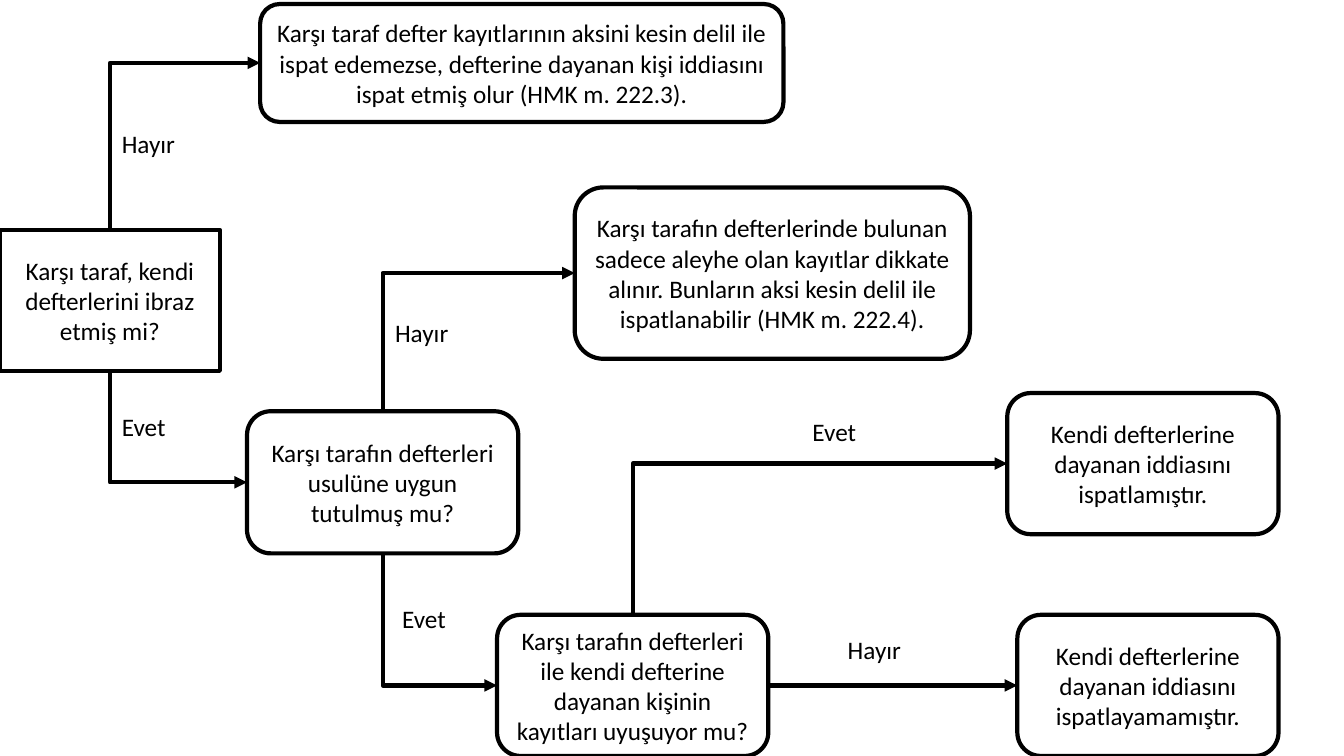
from lxml import etree
from pptx import Presentation
from pptx.dml.color import RGBColor
from pptx.enum.shapes import MSO_CONNECTOR, MSO_SHAPE
from pptx.enum.text import MSO_ANCHOR, PP_ALIGN
from pptx.oxml.ns import qn
from pptx.util import Inches, Pt

BLACK = RGBColor(0, 0, 0)
WHITE = RGBColor(255, 255, 255)
TOP, LEFT, BOTTOM, RIGHT = range(4)  # connection sites of a box

# name: (left, top, width, height, text)
BOXES = {
    "submitted": (0, 2.28, 2.18, 1.4, "Karşı taraf, kendi defterlerini ibraz etmiş mi?"),
    "proven": (2.58, 0.04, 5.19, 1.17,
               "Karşı taraf defter kayıtlarının aksini kesin delil ile ispat edemezse, "
               "defterine dayanan kişi iddiasını ispat etmiş olur (HMK m. 222.3)."),
    "proper": (2.45, 4.08, 2.69, 1.41,
               "Karşı tarafın defterleri usulüne uygun tutulmuş mu?"),
    "matching": (4.93, 6.1, 2.69, 1.4,
                 "Karşı tarafın defterleri ile kendi defterine dayanan kişinin "
                 "kayıtları uyuşuyor mu?"),
    "adverse": (5.7, 1.86, 3.92, 1.7,
                "Karşı tarafın defterlerinde bulunan sadece aleyhe olan kayıtlar dikkate "
                "alınır. Bunların aksi kesin delil ile ispatlanabilir (HMK m. 222.4)."),
    "success": (9.99, 3.9, 2.69, 1.4,
                "Kendi defterlerine dayanan iddiasını ispatlamıştır."),
    "failure": (10.09, 6.1, 2.59, 1.4,
                "Kendi defterlerine dayanan iddiasını ispatlayamamıştır."),
}

# (from, site, to, answer, label left, label top)
BRANCHES = [
    ("submitted", TOP, "proven", "Hayır", 1.11, 1.22),
    ("submitted", BOTTOM, "proper", "Evet", 1.11, 4.03),
    ("proper", TOP, "adverse", "Hayır", 3.82, 3.1),
    ("proper", BOTTOM, "matching", "Evet", 3.89, 5.94),
    ("matching", TOP, "success", "Evet", 7.96, 4.08),
    ("matching", RIGHT, "failure", "Hayır", 8.31, 6.24),
]


def write(frame, text, align):
    frame.word_wrap = True
    para = frame.paragraphs[0]
    para.alignment = align
    run = para.add_run()
    run.text = text
    run.font.name = "Calibri"
    run.font.size = Pt(18)
    run.font.color.rgb = BLACK


def add_box(slide, left, top, width, height, text, kind):
    box = slide.shapes.add_shape(
        kind, Inches(left), Inches(top), Inches(width), Inches(height))
    box.shadow.inherit = False
    box.fill.solid()
    box.fill.fore_color.rgb = WHITE
    box.line.color.rgb = BLACK
    box.line.width = Pt(3)
    box.text_frame.vertical_anchor = MSO_ANCHOR.MIDDLE
    write(box.text_frame, text, PP_ALIGN.CENTER)
    return box


def turn_corner(link, upward):
    """Give the link one corner: first up or down, then to the right."""
    wide, high = link.width, link.height
    mid_x, mid_y = link.left + wide // 2, link.top + high // 2
    link.left, link.top = mid_x - high // 2, mid_y - wide // 2
    link.width, link.height = high, wide
    props = link._element.spPr
    props.find(qn("a:prstGeom")).set("prst", "bentConnector2")
    frame = props.find(qn("a:xfrm"))
    frame.set("rot", str((90 if upward else 270) * 60000))
    frame.set("flipH", "1")
    frame.set("flipV", "1" if upward else "0")


def add_link(slide, start, site, end):
    straight = site == RIGHT
    kind = MSO_CONNECTOR.STRAIGHT if straight else MSO_CONNECTOR.ELBOW
    link = slide.shapes.add_connector(kind, 0, 0, 0, 0)
    link.begin_connect(start, site)
    link.end_connect(end, LEFT)
    if not straight:
        turn_corner(link, site == TOP)
    link.line.color.rgb = BLACK
    link.line.width = Pt(3)
    etree.SubElement(link.line._get_or_add_ln(), qn("a:tailEnd"), type="triangle")
    etree.SubElement(link._element.spPr, qn("a:effectLst"))


def add_label(slide, left, top, text):
    label = slide.shapes.add_textbox(
        Inches(left), Inches(top), Inches(1.1), Inches(0.4))
    write(label.text_frame, text, PP_ALIGN.LEFT)


def add_chart(slide):
    """Draw the decision chart: boxes, then links with their answers."""
    boxes = {}
    for name, place in BOXES.items():
        kind = (MSO_SHAPE.FLOWCHART_PROCESS if name == "submitted"
                else MSO_SHAPE.FLOWCHART_ALTERNATE_PROCESS)
        boxes[name] = add_box(slide, *place, kind)
    for start, site, end, answer, left, top in BRANCHES:
        add_link(slide, boxes[start], site, boxes[end])
        add_label(slide, left, top, answer)


def main():
    deck = Presentation()
    deck.slide_width, deck.slide_height = Inches(13.33), Inches(7.5)
    add_chart(deck.slides.add_slide(deck.slide_layouts[6]))
    deck.save("out.pptx")


if __name__ == "__main__":
    main()
